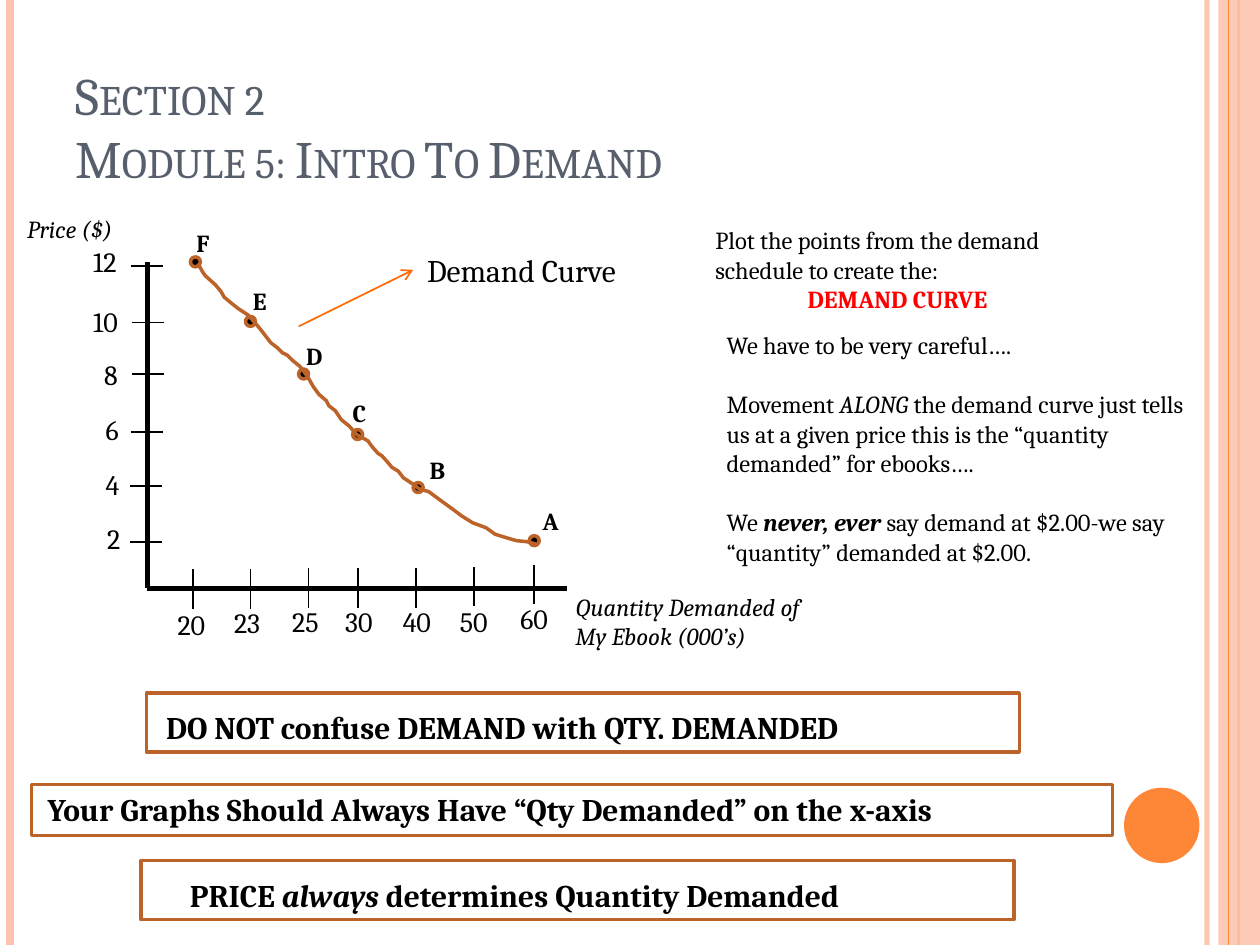
"""Build the demand curve slide of an introductory economics lesson."""
from dataclasses import dataclass
from typing import NamedTuple

from lxml import etree
from pptx import Presentation, util as u
from pptx.dml.color import RGBColor
from pptx.enum import shapes, text
from pptx.oxml.ns import qn

COLORS = {
    "black": "000000", "title": "575F6D", "red": "FF0000", "brown": "BC6329",
    "peach": "FEC3AE", "orange": "FE8637", "arrow": "FF6B0A",
}
FONT = "Cambria"
DOT, Y_TICK, X_TICK, LABEL_H = 0.2, 0.64, 0.79, 0.94
RECT, OVAL = shapes.MSO_SHAPE.RECTANGLE, shapes.MSO_SHAPE.OVAL


class Run(NamedTuple):
    text: str
    bold: bool = False
    italic: bool = False
    color: str = "black"


@dataclass
class Para:
    runs: list[Run]
    before: float = 0
    indent: float = 0


@dataclass
class Point:
    name: str
    left: float
    top: float
    label_left: float
    label_top: float


@dataclass
class Tick:
    label: str
    label_left: float
    label_top: float
    left: float
    top: float


@dataclass
class Banner:
    runs: list[Run]
    text_box: tuple[float, float, float, float]
    frame: tuple[float, float, float, float]


POINTS = [
    Point("A", 10.67, 10.8, 10.69, 10.08),
    Point("B", 8.33, 9.73, 8.41, 9.04),
    Point("C", 7.11, 8.66, 6.86, 7.9),
    Point("D", 6.02, 7.44, 5.92, 6.76),
    Point("E", 4.95, 6.38, 4.85, 5.64),
    Point("F", 3.84, 5.18, 3.71, 4.47),
]
Y_TICKS = [
    Tick("2", 1.91, 10.39, 2.62, 10.92),
    Tick("4", 1.88, 9.3, 2.62, 9.8),
    Tick("6", 1.88, 8.2, 2.64, 8.71),
    Tick("8", 1.85, 7.09, 2.67, 7.54),
    Tick("10", 1.63, 6.02, 2.67, 6.5),
    Tick("12", 1.63, 4.8, 2.64, 5.36),
]
X_TICKS = [
    Tick("20", 3.33, 12.12, 3.89, 11.48),
    Tick("23", 4.47, 12.09, 5.05, 11.48),
    Tick("25", 5.64, 12.06, 6.22, 11.46),
    Tick("30", 6.71, 12.06, 7.21, 11.46),
    Tick("40", 7.87, 12.06, 8.38, 11.46),
    Tick("50", 9.02, 12.06, 9.55, 11.43),
    Tick("60", 10.24, 12.01, 10.77, 11.38),
]
CURVE = [
    (3.99, 5.31), (4.09, 5.49), (4.14, 5.56), (4.34, 5.74), (4.45, 5.87), (4.52, 5.99),
    (4.65, 6.1), (4.8, 6.22), (5, 6.35), (5.16, 6.53), (5.26, 6.65), (5.46, 6.91),
    (5.59, 7.01), (5.69, 7.11), (5.79, 7.16), (5.89, 7.26), (6.05, 7.39), (6.2, 7.59),
    (6.32, 7.8), (6.43, 7.95), (6.58, 8.08), (6.63, 8.18), (6.76, 8.28), (6.88, 8.46),
    (7.04, 8.59), (7.19, 8.76), (7.42, 8.89), (7.49, 8.99), (7.62, 9.14), (7.7, 9.19),
    (7.8, 9.3), (7.9, 9.42), (8.03, 9.5), (8.13, 9.63), (8.31, 9.75), (8.46, 9.86),
    (8.64, 9.91), (8.94, 10.13), (9.12, 10.26), (9.32, 10.41), (9.53, 10.54), (9.8, 10.64),
    (9.98, 10.77), (10.24, 10.85), (10.41, 10.9), (10.62, 10.92), (10.82, 10.97),
]
BANNERS = [
    Banner([Run("DO NOT confuse DEMAND with QTY. DEMANDED", True)],
           (3.1, 14.15, 17.35, 1.02), (2.95, 13.97, 17.6, 1.19)),
    Banner([Run("Your Graphs Should Always Have “Qty Demanded” on the x-axis", True)],
           (0.71, 15.8, 21.84, 1.02), (0.64, 15.82, 21.79, 1.02)),
    Banner([Run("PRICE ", True), Run("always", True, True),
            Run(" determines Quantity Demanded", True)],
           (3.58, 17.53, 16.13, 1.02), (2.84, 17.35, 17.6, 1.19)),
]


def rgb(name: str) -> RGBColor:
    """Look up a named colour."""
    return RGBColor.from_string(COLORS[name])


def set_alpha(sp, percent: int) -> None:
    """Make the only colour of a shape or line partly transparent."""
    color = next(sp._element.spPr.iter(qn("a:srgbClr")))
    etree.SubElement(color, qn("a:alpha"), val=str(percent * 1000))


def add_line(s, start: tuple, end: tuple, color: str = "black", width: float = 1):
    """Draw a straight line without a shadow."""
    cn = s.shapes.add_connector(
        shapes.MSO_CONNECTOR.STRAIGHT, *(u.Cm(v) for v in (*start, *end)))
    cn.line.color.rgb, cn.line.width = rgb(color), u.Pt(width)
    etree.SubElement(cn._element.spPr, qn("a:effectLst"))
    return cn


def style_shape(sp, fill: str = "", line: str = "") -> None:
    """Give a shape its fill and line, or none."""
    sp.shadow.inherit = False
    if fill:
        sp.fill.solid()
        sp.fill.fore_color.rgb = rgb(fill)
    else:
        sp.fill.background()
    if line:
        sp.line.color.rgb, sp.line.width = rgb(line), u.Pt(2)
    else:
        sp.line.fill.background()


def add_shape(s, kind, box: tuple, fill: str = "", line: str = ""):
    """Draw a preset shape."""
    sp = s.shapes.add_shape(kind, *(u.Cm(v) for v in box))
    style_shape(sp, fill, line)
    return sp


def add_text(s, box: tuple, paras: list[Para], size: float, wrap: bool = False):
    """Write paragraphs run by run in a text box."""
    tf = s.shapes.add_textbox(*(u.Cm(v) for v in box)).text_frame
    tf.word_wrap = wrap
    tf.auto_size = text.MSO_AUTO_SIZE.SHAPE_TO_FIT_TEXT
    for i, para in enumerate(paras):
        p = tf.add_paragraph() if i else tf.paragraphs[0]
        p.space_before = u.Pt(para.before)
        if para.indent:
            p._p.get_or_add_pPr().set("marL", str(u.Cm(para.indent)))
        for run in para.runs:
            r = p.add_run()
            r.text = run.text
            r.font.name, r.font.size = FONT, u.Pt(size)
            r.font.bold, r.font.italic = run.bold, run.italic
            r.font.color.rgb = rgb(run.color)
    return tf


def add_decoration(s) -> None:
    """Draw the side stripes and the disc."""
    for x, color, width in [(24.33, "peach", 3), (0.2, "peach", 4.5), (24.97, "orange", 1.5)]:
        cn = add_line(s, (x, 0), (x, 19.05), color, width)
        if width == 3:
            set_alpha(cn, 93)
    set_alpha(add_shape(s, RECT, (24.56, 0, 0.84, 19.05), "peach"), 87)
    add_line(s, (24.77, 0), (24.77, 19.05), "orange", 0.75)
    add_shape(s, OVAL, (22.66, 15.88, 1.52, 1.52), "orange")


def add_title(s) -> None:
    """Write the two title lines in small capitals."""
    lines = ["Section 2", "Module 5: Intro To Demand"]
    tf = add_text(s, (1.27, 0.76, 20.75, 3.18),
                  [Para([Run(line, color="title")]) for line in lines], 30, True)
    tf.auto_size = text.MSO_AUTO_SIZE.NONE
    tf.vertical_anchor = text.MSO_ANCHOR.BOTTOM
    for p in tf.paragraphs:
        p.runs[0].font._element.set("cap", "small")


def add_graph(s) -> None:
    """Draw the points, axes, ticks, curve and their labels."""
    for pt in POINTS:
        add_shape(s, OVAL, (pt.left, pt.top, DOT, DOT), "black", "brown")
        add_text(s, (pt.label_left, pt.label_top, 0.89, 0.86), [Para([Run(pt.name, True)])], 14)
    origin = (2.97, 11.86)
    add_line(s, (2.97, 5.28), origin, width=3)
    add_line(s, origin, (11.43, 11.86), width=3)
    for ticks, dx, dy in [(Y_TICKS, Y_TICK, 0), (X_TICKS, 0, X_TICK)]:
        for t in ticks:
            add_line(s, (t.left, t.top), (t.left + dx, t.top + dy))
            width = 0.84 if len(t.label) == 1 else 1.14
            add_text(s, (t.label_left, t.label_top, width, LABEL_H), [Para([Run(t.label)])], 16)
    add_text(s, (0.3, 4.19, 2.44, 0.86), [Para([Run("Price ($)", italic=True)])], 14)
    add_text(s, (11.35, 11.81, 5.77, 1.45),
             [Para([Run(line, italic=True)])
              for line in ("Quantity Demanded of", "My Ebook (000’s)")], 14)
    start, *rest = [(x * 100, y * 100) for x, y in CURVE]
    fb = s.shapes.build_freeform(*start, scale=u.Cm(0.01))
    fb.add_line_segments(rest, close=False)
    style_shape(fb.convert_to_shape(), line="brown")
    arrow = add_line(s, (6.02, 6.58), (8.33, 5.44), "arrow")
    etree.SubElement(arrow.line._get_or_add_ln(), qn("a:tailEnd"), type="arrow")
    add_text(s, (8.36, 4.93, 5, 1.02), [Para([Run("Demand Curve")])], 18)


def add_notes(s) -> None:
    """Write the explanations beside the graph."""
    add_text(s, (14.17, 4.42, 8.46, 2.06), [
        Para([Run("Plot the points from the demand schedule to create the:")]),
        Para([Run("DEMAND CURVE", True, color="red")], indent=1.86)], 14, True)
    add_text(s, (14.4, 6.53, 9.96, 5.05), [
        Para([Run("We have to be very careful….")]),
        Para([Run("Movement "), Run("ALONG", italic=True),
              Run(" the demand curve just tells us at a given price this is the "
                  "“quantity demanded” for ebooks….")], before=17),
        Para([Run("We "), Run("never, ever ", True, True),
              Run("say demand at $2.00-we say “quantity” demanded at $2.00.")],
             before=17)], 14, True)


def main() -> None:
    """Build and save the slide."""
    prs = Presentation()
    prs.slide_width, prs.slide_height = u.Cm(25.4), u.Cm(19.05)
    s = prs.slides.add_slide(prs.slide_layouts[6])
    add_decoration(s)
    add_title(s)
    add_graph(s)
    add_notes(s)
    for banner in BANNERS:
        add_text(s, banner.text_box, [Para(banner.runs)], 18)
        add_shape(s, RECT, banner.frame, line="brown")
    prs.save("out.pptx")


if __name__ == "__main__":
    main()
